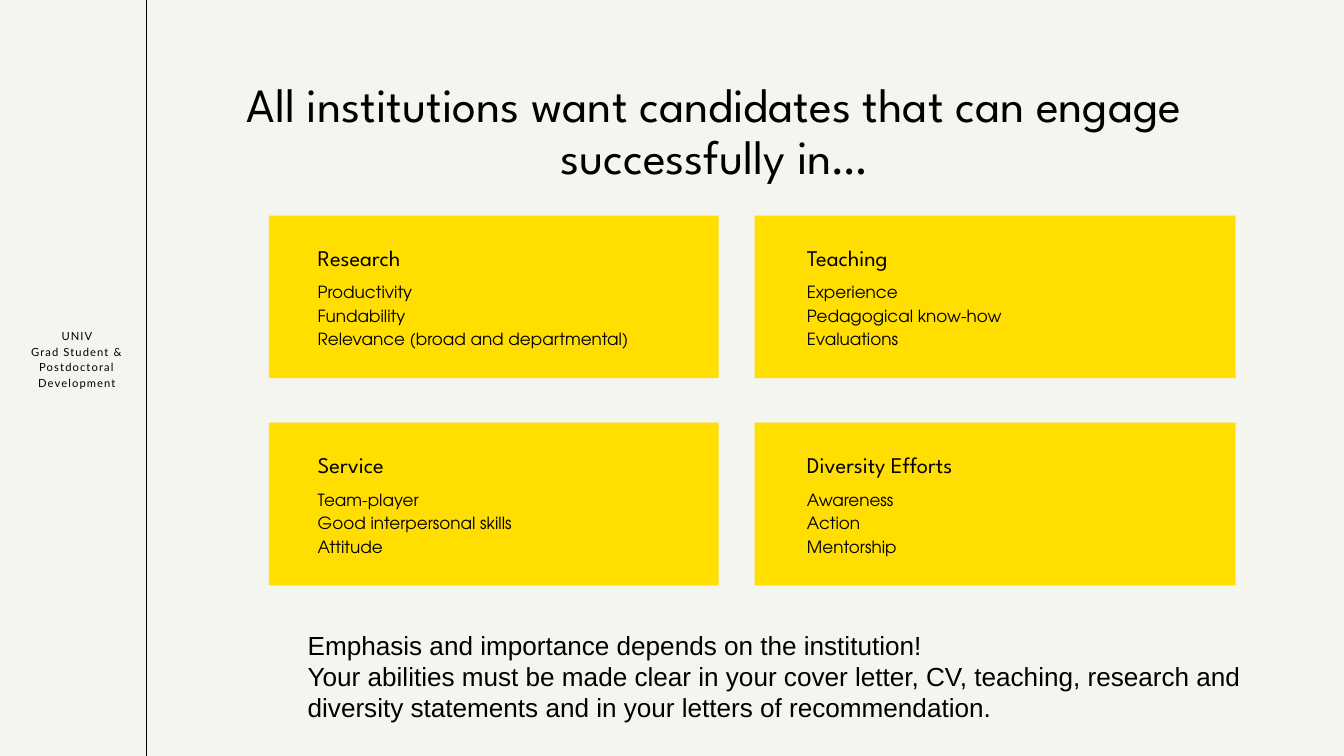
import pptx
import pptx.dml.color
import pptx.enum.shapes
import pptx.enum.text
import pptx.oxml
import pptx.oxml.ns
import pptx.util
from pptx.util import Cm

COLOURS = {"paper": "F5F5EF", "ink": "000000", "card": "FFDE00"}
ALIGN = pptx.enum.text.PP_ALIGN
CARDS = [
    ("Research", ["Productivity", "Fundability", "Relevance (broad and departmental)"]),
    ("Teaching", ["Experience", "Pedagogical know-how", "Evaluations"]),
    ("Service", ["Team-player", "Good interpersonal skills", "Attitude"]),
    ("Diversity Efforts", ["Awareness", "Action", "Mentorship"]),
]
COLUMNS = [
    {"left": 10.16, "width": 17, "inset": 1.85},
    {"left": 28.52, "width": 18.19, "inset": 1.98},
]
ROW_TOPS = [8.15, 15.98]
CARD_HEIGHT = 6.15


def rgb(name):
    """Return the named colour."""
    return pptx.dml.color.RGBColor.from_string(COLOURS[name])


def apply_format(target, values):
    """Set each attribute of the target from a dict."""
    for name, value in values.items():
        setattr(target, name, value)


def place(shape, left, top, width, height):
    """Position a shape by lengths in centimetres."""
    apply_format(shape, {"left": Cm(left), "top": Cm(top), "width": Cm(width), "height": Cm(height)})


def write(box, lines, font, size, spacing=None, align=ALIGN.LEFT, margins=(0, 0), tracking=None):
    """Fill a box with unbulleted paragraphs in one style."""
    side, end = margins
    frame = box.text_frame
    apply_format(frame, {
        "word_wrap": True, "auto_size": pptx.enum.text.MSO_AUTO_SIZE.NONE,
        "vertical_anchor": pptx.enum.text.MSO_ANCHOR.TOP,
        "margin_left": Cm(side), "margin_right": Cm(side),
        "margin_top": Cm(end), "margin_bottom": Cm(end),
    })
    for number, line in enumerate(lines):
        para = frame.add_paragraph() if number else frame.paragraphs[0]
        apply_format(para, {
            "alignment": align, "space_before": pptx.util.Pt(0),
            "line_spacing": pptx.util.Pt(spacing) if spacing else 1.0,
        })
        properties = para._p.get_or_add_pPr()
        properties.set("marL", "0")
        properties.set("indent", "0")
        properties.append(pptx.oxml.parse_xml(f"<a:buNone {pptx.oxml.ns.nsdecls('a')}/>"))
        span = para.add_run()
        span.text = line
        apply_format(span.font, {"name": font, "size": pptx.util.Pt(size), "bold": False})
        span.font.color.rgb = rgb("ink")
        if tracking:
            span.font._element.set("spc", str(tracking))


def add_text(page, bounds, lines, font, size, **style):
    """Add a text box with the given bounds and style."""
    box = page.shapes.add_textbox(*map(Cm, bounds))
    write(box, lines, font, size, **style)


def add_sidebar(page, height):
    """Add the side label and the vertical rule."""
    add_text(page, (0.84, 12.37, 4.14, 2.39), ["UNIV", "Grad Student & Postdoctoral Development"],
             "Lato", 12, spacing=16.8, align=ALIGN.CENTER, tracking=120)
    rule = page.shapes.add_connector(
        pptx.enum.shapes.MSO_CONNECTOR.STRAIGHT, Cm(5.55), 0, Cm(5.55), height)
    rule.line.color.rgb = rgb("ink")
    rule.line.width = pptx.util.Pt(1.1)
    rule._element.spPr.append(pptx.oxml.parse_xml(f"<a:effectLst {pptx.oxml.ns.nsdecls('a')}/>"))


def add_card(page, body, column, top, heading, items):
    """Add a card with its heading and its list placeholder in front."""
    card = page.shapes.add_shape(pptx.enum.shapes.MSO_SHAPE.RECTANGLE, 0, 0, 0, 0)
    place(card, column["left"], top, column["width"], CARD_HEIGHT)
    card.shadow.inherit = False
    card.fill.solid()
    card.fill.fore_color.rgb = rgb("card")
    card.line.fill.background()
    left = column["left"] + column["inset"]
    width = column["width"] - 2 * column["inset"]
    add_text(page, (left, top + 0.9, width, 1.17), [heading], "League Spartan", 24, spacing=33.6)
    place(body, left, top + 2.39, width, 2.64)
    write(body, items, "TeX Gyre Adventor", 18, spacing=25.2)
    card.element.addnext(body.element)


def main():
    """Build the slide and save it."""
    deck = pptx.Presentation()
    apply_format(deck, {"slide_width": Cm(50.8), "slide_height": Cm(28.58)})
    page = deck.slides.add_slide(deck.slide_layouts.get_by_name("Comparison"))
    page.background.fill.solid()
    page.background.fill.fore_color.rgb = rgb("paper")
    title, *bodies = page.placeholders
    place(title, 8.59, 3, 36.83, 4.04)
    write(title, ["All institutions want candidates that can engage successfully in…"],
          "League Spartan", 51.1, spacing=56.3, align=ALIGN.CENTER)
    add_sidebar(page, deck.slide_height)
    for number, (body, (heading, items)) in enumerate(zip(bodies, CARDS)):
        row, column = divmod(number, 2)
        add_card(page, body, COLUMNS[column], ROW_TOPS[row], heading, items)
    add_text(page, (11.38, 23.65, 36.27, 3.84), [
        "Emphasis and importance depends on the institution!",
        "Your abilities must be made clear in your cover letter, CV, teaching, research and "
        "diversity statements and in your letters of recommendation.",
    ], "Arial", 28, margins=(0.25, 0.13))
    deck.save("out.pptx")


if __name__ == "__main__":
    main()
